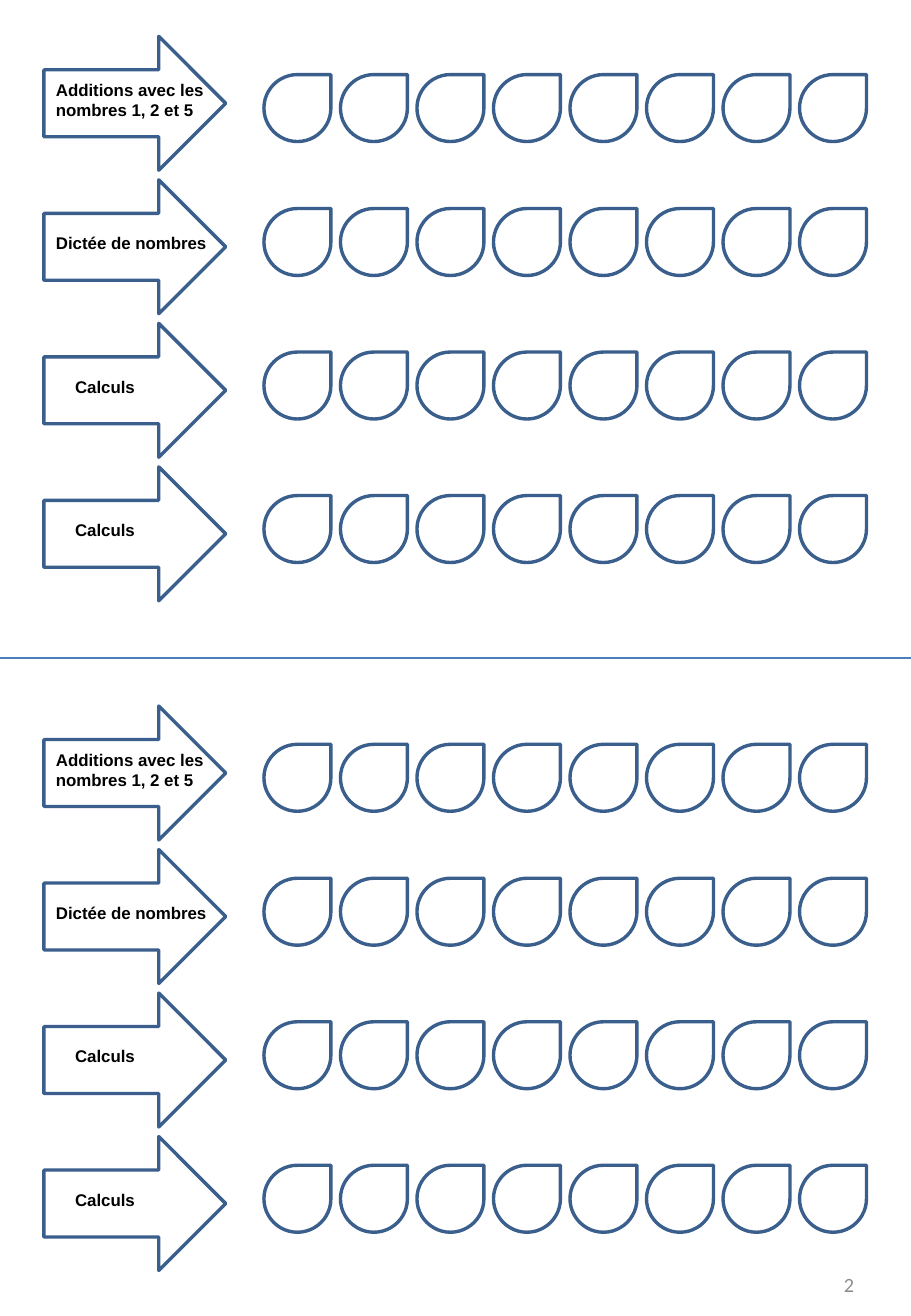
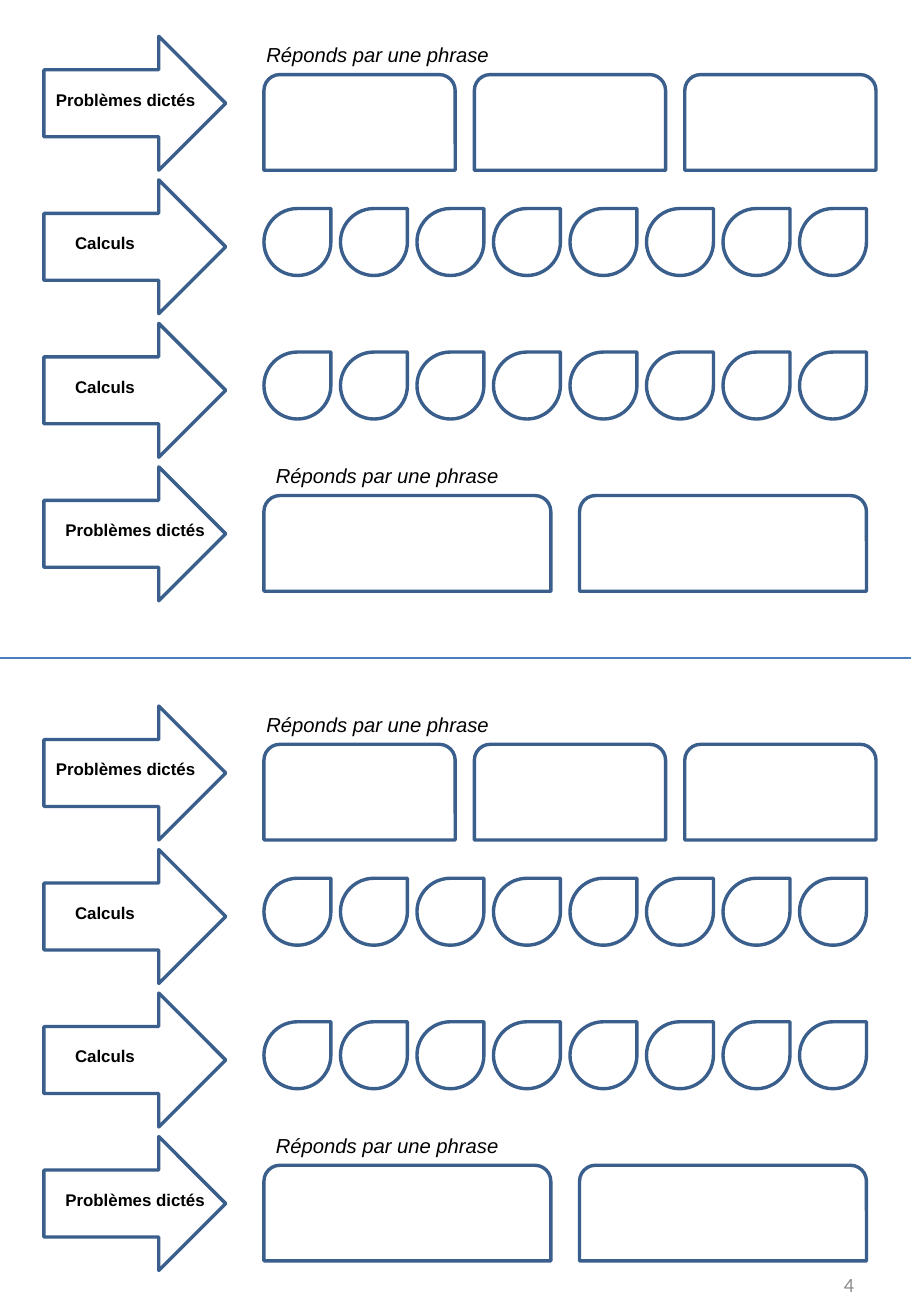
from lxml.etree import SubElement
from pptx import Presentation
from pptx.dml.color import RGBColor
from pptx.enum.shapes import MSO_CONNECTOR as Connector, MSO_SHAPE as Shape
from pptx.enum.text import MSO_ANCHOR as Anchor, MSO_AUTO_SIZE as AutoSize, PP_ALIGN as Align
from pptx.oxml.ns import qn
from pptx.util import Cm, Pt

OUTLINE = RGBColor(0x3A, 0x5F, 0x8C)
DIVIDER = RGBColor(0x4B, 0x7E, 0xBC)
INK = RGBColor(0, 0, 0)
GREY = RGBColor(0x8C, 0x8C, 0x8C)

PAGE_WIDTH, PAGE_HEIGHT = 19.05, 27.51
HALF_TOPS = (0.76, 14.76)
ROW_PITCH = 3
ARROW_LEFT, ARROW_WIDTH, ARROW_HEIGHT = 0.92, 3.8, 2.8
ANSWER_LEFT = 5.52
DROP_COUNT, DROP_SIZE, DROP_PITCH = 8, 1.4, 1.6
CARD_HEIGHT = 2
PROMPT = "Réponds par une phrase"


class Worksheet:
    def __init__(self):
        self.deck = Presentation()
        self.deck.slide_width = Cm(PAGE_WIDTH)
        self.deck.slide_height = Cm(PAGE_HEIGHT)
        self.slide = None

    def add_page(self):
        self.slide = self.deck.slides.add_slide(self.deck.slide_layouts[6])

    def outline(self, kind, left, top, width, height):
        figure = self.slide.shapes.add_shape(kind, Cm(left), Cm(top), Cm(width), Cm(height))
        figure.shadow.inherit = False
        figure.fill.background()
        figure.line.color.rgb = OUTLINE
        figure.line.width = Pt(2)

    def text(self, words, left, top, width, height, size, font="Arial", color=INK,
             bold=False, italic=False):
        box = self.slide.shapes.add_textbox(Cm(left), Cm(top), Cm(width), Cm(height))
        frame = box.text_frame
        frame.word_wrap = True
        frame.auto_size = AutoSize.SHAPE_TO_FIT_TEXT
        paragraph = frame.paragraphs[0]
        paragraph.text = words
        paragraph.font.name = font
        paragraph.font.size = Pt(size)
        paragraph.font.color.rgb = color
        paragraph.font.bold = bold
        paragraph.font.italic = italic
        return frame

    def cut_line(self):
        middle = Cm(PAGE_HEIGHT / 2)
        cut = self.slide.shapes.add_connector(
            Connector.STRAIGHT, 0, middle, Cm(PAGE_WIDTH), middle)
        cut.line.color.rgb = DIVIDER
        cut.line.width = Pt(0.75)
        SubElement(cut._element.spPr, qn("a:effectLst"))

    def arrow(self, top):
        self.outline(Shape.RIGHT_ARROW, ARROW_LEFT, top, ARROW_WIDTH, ARROW_HEIGHT)

    def label(self, words, top, indent, width, lines):
        self.text(words, ARROW_LEFT + indent, top + 1.18 - 0.2 * lines, width,
                  0.26 + 0.43 * lines, 10, bold=True)

    def drops(self, top):
        for column in range(DROP_COUNT):
            self.outline(Shape.TEAR, ANSWER_LEFT + column * DROP_PITCH, top,
                         DROP_SIZE, DROP_SIZE)

    def cards(self, top, count, width, gap, prompt_indent):
        for column in range(count):
            self.outline(Shape.ROUND_2_SAME_RECTANGLE, ANSWER_LEFT + column * (width + gap),
                         top, width, CARD_HEIGHT)
        self.text(PROMPT, ANSWER_LEFT + prompt_indent, top - 0.8, 12.8, 0.77, 12, italic=True)

    def page_number(self, number):
        frame = self.text(number, 13.66, 26.45, 4.45, 0.8, 12, font="Calibri", color=GREY)
        frame.auto_size = AutoSize.NONE
        frame.vertical_anchor = Anchor.MIDDLE
        frame.paragraphs[0].alignment = Align.RIGHT

    def half(self, half_top, exercises):
        for row, (words, indent, width, lines, cards) in enumerate(exercises):
            top = half_top + row * ROW_PITCH
            answer_top = top + (0.6 if row else 0.8)
            self.arrow(top)
            self.label(words, top, indent, width, lines)
            if cards:
                self.cards(answer_top, *cards)
            else:
                self.drops(answer_top)

    def page(self, number, exercises):
        self.add_page()
        self.cut_line()
        for half_top in HALF_TOPS:
            self.half(half_top, exercises)
        self.page_number(number)


SUMS = ("Calculs", 0.4, 3.6, 1, None)
PAGES = {
    "2": [
        ("Additions avec les nombres 1, 2 et 5", 0, 3.6, 2, None),
        ("Dictée de nombres", 0, 3.9, 1, None),
        SUMS,
        SUMS,
    ],
    "4": [
        ("Problèmes dictés", 0, 3.6, 1, (3, 4, 0.4, -0.2)),
        SUMS,
        SUMS,
        ("Problèmes dictés", 0.2, 3.6, 1, (2, 6, 0.6, 0)),
    ],
}


def main():
    worksheet = Worksheet()
    for number, exercises in PAGES.items():
        worksheet.page(number, exercises)
    worksheet.deck.save("out.pptx")


if __name__ == "__main__":
    main()
